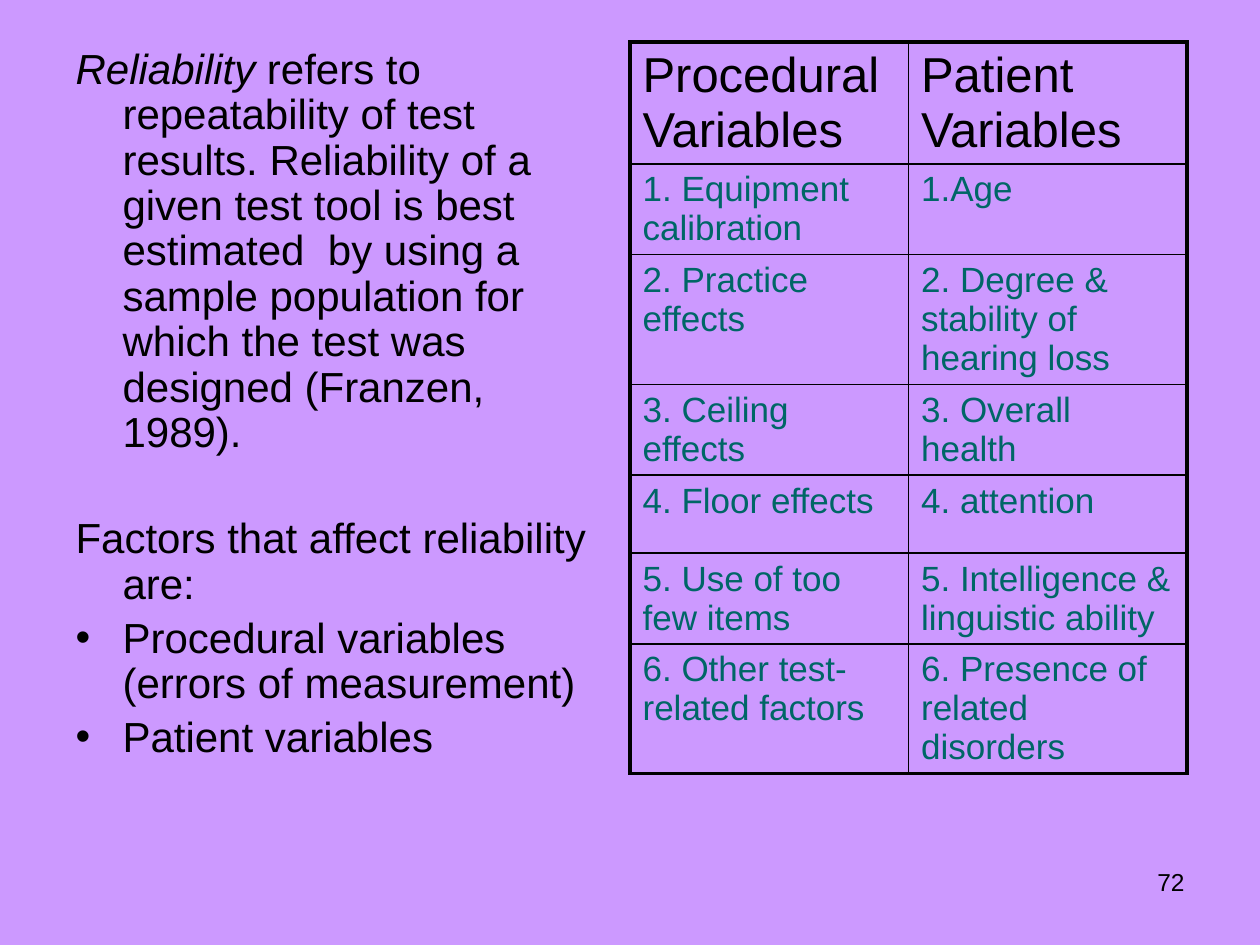
from lxml.etree import SubElement
from pptx import Presentation
from pptx.dml.color import RGBColor
from pptx.enum.text import MSO_ANCHOR, MSO_AUTO_SIZE, PP_ALIGN
from pptx.oxml.ns import qn
from pptx.util import Emu, Pt

SCALE = 914400 / 126
BACKGROUND = RGBColor(0xCC, 0x99, 0xFF)
BLACK = RGBColor(0x00, 0x00, 0x00)
TEAL = RGBColor(0x00, 0x66, 0x66)
FONT = "Arial"
THIN, THICK = Pt(1), Pt(2.25)

PARAGRAPHS = [
    (0, False, [
        ("Reliability", True),
        (" refers to repeatability of test results. Reliability of a given test tool "
         "is best estimated  by using a sample population for which the test was "
         "designed (Franzen, 1989).", False)]),
    (35, False, [("Factors that affect reliability are:", False)]),
    (4.8, True, [("Procedural variables (errors of measurement)", False)]),
    (4.8, True, [("Patient variables", False)]),
]
VARIABLES = [
    ("Procedural Variables", "Patient Variables"),
    ("1. Equipment calibration", "1.Age"),
    ("2. Practice effects", "2. Degree & stability of hearing loss"),
    ("3. Ceiling effects", "3. Overall health"),
    ("4. Floor effects", "4. attention"),
    ("5. Use of too few items", "5. Intelligence & linguistic ability"),
    ("6. Other test-related factors", "6. Presence of related disorders"),
]


def px(length):
    """Turn pixels into EMU."""
    return Emu(round(length * SCALE))


def add_run(paragraph, text, size, color=BLACK, italic=False):
    """Add one formatted run to a paragraph."""
    run = paragraph.add_run()
    run.text = text
    run.font.name = FONT
    run.font.size = Pt(size)
    run.font.italic = italic
    run.font.color.rgb = color


def set_bullet(paragraph, bulleted, indent):
    """Give a paragraph a hanging indent, with or without a bullet."""
    properties = paragraph._p.get_or_add_pPr()
    properties.set("marL", str(px(indent)))
    properties.set("indent", str(-px(indent)))
    if bulleted:
        SubElement(properties, qn("a:buFont"), typeface=FONT)
        SubElement(properties, qn("a:buChar"), char="•")
    else:
        SubElement(properties, qn("a:buNone"))


def fill_body(body, left, top, width, height):
    """Place the body placeholder and write the reliability text."""
    body.left, body.top, body.width, body.height = map(px, (left, top, width, height))
    frame = body.text_frame
    frame.word_wrap = True
    frame.auto_size = MSO_AUTO_SIZE.NONE
    frame.vertical_anchor = MSO_ANCHOR.TOP
    for index, (space, bulleted, runs) in enumerate(PARAGRAPHS):
        paragraph = frame.add_paragraph() if index else frame.paragraphs[0]
        set_bullet(paragraph, bulleted, 47)
        paragraph.line_spacing = 0.9
        paragraph.space_before = Pt(space)
        for text, italic in runs:
            add_run(paragraph, text, 24, italic=italic)


def set_borders(cell, widths):
    """Draw the left, right, top and bottom borders of a cell."""
    properties = cell._tc.get_or_add_tcPr()
    for side, width in zip(("lnL", "lnR", "lnT", "lnB"), widths):
        line = SubElement(properties, qn(f"a:{side}"), w=str(width))
        fill = SubElement(line, qn("a:solidFill"))
        SubElement(fill, qn("a:srgbClr"), val=str(BLACK))


def add_variables_table(slide, left, top, width, row_height):
    """Add the table of variables with a thick outer frame."""
    rows, columns = len(VARIABLES), len(VARIABLES[0])
    table = slide.shapes.add_table(
        rows, columns, px(left), px(top), px(width), px(row_height * rows)).table
    table.first_row = table.horz_banding = False
    for row, texts in enumerate(VARIABLES):
        for column, text in enumerate(texts):
            cell = table.cell(row, column)
            outer = (column == 0, column == columns - 1, row == 0, row == rows - 1)
            set_borders(cell, [THICK if edge else THIN for edge in outer])
            cell.fill.background()
            size, color = (20, TEAL) if row else (28, BLACK)
            add_run(cell.text_frame.paragraphs[0], text, size, color)


def add_page_number(slide, left, top, width, height):
    """Add the right-aligned page number."""
    box = slide.shapes.add_textbox(*map(px, (left, top, width, height)))
    box.text_frame.word_wrap = True
    paragraph = box.text_frame.paragraphs[0]
    paragraph.alignment = PP_ALIGN.RIGHT
    add_run(paragraph, "72", 14)


def main():
    """Build and save the presentation."""
    presentation = Presentation()
    presentation.slide_width, presentation.slide_height = px(1260), px(945)
    slide = presentation.slides.add_slide(presentation.slide_layouts[1])
    slide.background.fill.solid()
    slide.background.fill.fore_color.rgb = BACKGROUND
    title = slide.shapes.title._element
    title.getparent().remove(title)
    fill_body(slide.placeholders[1], 63, 42, 557, 803)
    add_variables_table(slide, 630, 42, 557, 78)
    add_page_number(slide, 903, 861, 294, 66)
    presentation.save("out.pptx")


if __name__ == "__main__":
    main()
